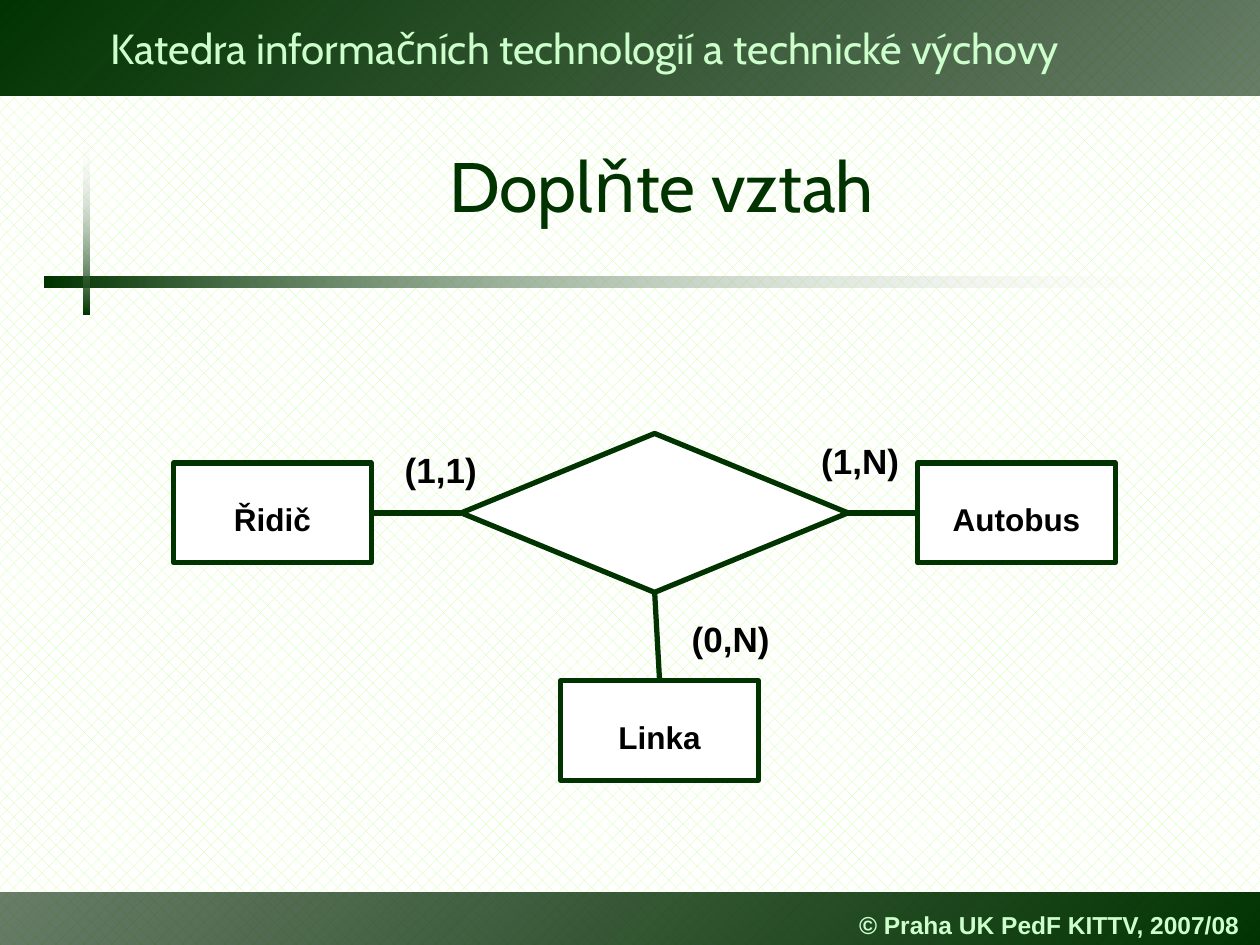
from dataclasses import dataclass

from lxml.etree import SubElement
from pptx import Presentation
from pptx.dml.color import RGBColor
from pptx.enum.dml import MSO_PATTERN
from pptx.enum.shapes import MSO_CONNECTOR, MSO_SHAPE
from pptx.enum.text import MSO_ANCHOR, PP_ALIGN
from pptx.oxml import parse_xml
from pptx.oxml.ns import nsdecls, qn
from pptx.util import Pt

DARK_GREEN = RGBColor(0x00, 0x33, 0x00)
DEEP_GREEN = RGBColor(0x00, 0x24, 0x00)
PALE_GREEN = RGBColor(0xCC, 0xFF, 0xCC)
LIME = RGBColor(0xCC, 0xFF, 0x99)
WHITE = RGBColor(0xFF, 0xFF, 0xFF)
BLACK = RGBColor(0x00, 0x00, 0x00)

HEADER_FONT = {"name": "Cabin", "size": Pt(24)}
TITLE_FONT = {"name": "Cabin", "size": Pt(40)}
FOOTER_FONT = {"name": "Arial", "size": Pt(14), "bold": True}
ENTITY_FONT = {"name": "Arial", "size": Pt(18), "bold": True}
LABEL_FONT = {"name": "Arial", "size": Pt(20), "bold": True}

ENTITY_WIDTH, ENTITY_HEIGHT = 113, 57
ROW_MIDDLE = 293.1
TOP, LEFT, BOTTOM, RIGHT = range(4)


@dataclass(frozen=True)
class Box:
    left: float
    top: float
    width: float
    height: float

    def lengths(self) -> tuple:
        return Pt(self.left), Pt(self.top), Pt(self.width), Pt(self.height)


@dataclass(frozen=True)
class GradientStop:
    color: RGBColor
    opacity: int = 100


@dataclass(frozen=True)
class Bar:
    box: Box
    start: GradientStop
    end: GradientStop
    angle: int
    rotation: int = 0


@dataclass(frozen=True)
class Entity:
    name: str
    left: float
    top: float
    own_side: int
    relation_side: int


@dataclass(frozen=True)
class Label:
    text: str
    box: Box


BAND = {"start": GradientStop(DEEP_GREEN, 59), "end": GradientStop(DARK_GREEN), "angle": 315}
RULE = {"start": GradientStop(DARK_GREEN), "end": GradientStop(WHITE, 0), "angle": 0}
BARS = [
    Bar(Box(0, 510, 720, 32), **BAND),
    Bar(Box(0, 0, 720, 54.7), rotation=180, **BAND),
    Bar(Box(25.2, 158.3, 683.3, 6), **RULE),
    Bar(Box(-1.9, 126.5, 103, 3.2), rotation=270, **RULE),
]
ROW_TOP = ROW_MIDDLE - ENTITY_HEIGHT / 2
ENTITIES = [
    Entity("Řidič", 99.2, ROW_TOP, RIGHT, LEFT),
    Entity("Autobus", 524.4, ROW_TOP, LEFT, RIGHT),
    Entity("Linka", 320.4, 388.9, TOP, BOTTOM),
]
LABELS = [
    Label("(1,1)", Box(223.9, 252.7, 56, 31.5)),
    Label("(1,N)", Box(462, 247.7, 59, 31.5)),
    Label("(0,N)", Box(388, 349.2, 59, 31.5)),
]


def write(shape, text: str, font: dict, color: RGBColor, alignment=PP_ALIGN.LEFT,
          anchor=MSO_ANCHOR.TOP, wrap: bool = True):
    frame = shape.text_frame
    frame.word_wrap = wrap
    frame.vertical_anchor = anchor
    paragraph = frame.paragraphs[0]
    paragraph.alignment = alignment
    run = paragraph.add_run()
    run.text = text
    for name, value in font.items():
        setattr(run.font, name, value)
    run.font.color.rgb = color
    return run


def add_text(slide, box: Box, text: str, font: dict, color: RGBColor, **layout):
    return write(slide.shapes.add_textbox(*box.lengths()), text, font, color, **layout)


def add_text_shadow(run) -> None:
    run.font.fill._xPr.find(qn("a:solidFill")).addnext(parse_xml(
        f'<a:effectLst {nsdecls("a")}><a:outerShdw dist="35921" dir="2700000">'
        '<a:srgbClr val="000000"/></a:outerShdw></a:effectLst>'))


def add_bar(slide, bar: Bar) -> None:
    shape = slide.shapes.add_shape(MSO_SHAPE.RECTANGLE, *bar.box.lengths())
    shape.rotation = bar.rotation
    shape.shadow.inherit = False
    shape.line.fill.background()
    shape.fill.gradient()
    shape.fill.gradient_angle = bar.angle
    for stop, wanted in zip(shape.fill.gradient_stops, (bar.start, bar.end)):
        stop.color.rgb = wanted.color
    colors = shape._element.spPr.iter(qn("a:srgbClr"))
    for element, wanted in zip(colors, (bar.start, bar.end)):
        if wanted.opacity < 100:
            SubElement(element, qn("a:alpha")).set("val", str(wanted.opacity * 1000))


def add_outlined(slide, kind, box: Box):
    shape = slide.shapes.add_shape(kind, *box.lengths())
    shape.shadow.inherit = False
    shape.fill.solid()
    shape.fill.fore_color.rgb = WHITE
    shape.line.color.rgb = DARK_GREEN
    shape.line.width = Pt(3)
    return shape


def add_entity(slide, entity: Entity):
    box = Box(entity.left, entity.top, ENTITY_WIDTH, ENTITY_HEIGHT)
    shape = add_outlined(slide, MSO_SHAPE.RECTANGLE, box)
    write(shape, entity.name, ENTITY_FONT, BLACK, PP_ALIGN.CENTER, MSO_ANCHOR.MIDDLE)
    shape.text_frame.margin_top = Pt(10.6)
    return shape


def join(slide, first, first_side: int, second, second_side: int) -> None:
    connector = slide.shapes.add_connector(MSO_CONNECTOR.STRAIGHT, 0, 0, 0, 0)
    connector.begin_connect(first, first_side)
    connector.end_connect(second, second_side)
    connector.line.color.rgb = DARK_GREEN
    connector.line.width = Pt(3)
    SubElement(connector._element.spPr, qn("a:effectLst"))


def main() -> None:
    presentation = Presentation()
    presentation.slide_width, presentation.slide_height = Pt(720), Pt(540)
    slide = presentation.slides.add_slide(presentation.slide_layouts[6])
    background = slide.background.fill
    background.patterned()
    background.pattern = MSO_PATTERN.PERCENT_25
    background.fore_color.rgb = LIME
    background.back_color.rgb = WHITE

    for bar in BARS:
        add_bar(slide, bar)
    header = add_text(slide, Box(56.2, 9.4, 581, 36),
                      "Katedra informačních technologií a technické výchovy",
                      HEADER_FONT, PALE_GREEN)
    add_text_shadow(header)
    add_text(slide, Box(483.8, 516.2, 236.2, 24), "© Praha UK PedF KITTV, 2007/08",
             FOOTER_FONT, PALE_GREEN, anchor=MSO_ANCHOR.MIDDLE, wrap=False)
    add_text(slide, Box(54, 60.5, 648, 90), "Doplňte vztah", TITLE_FONT, DARK_GREEN,
             alignment=PP_ALIGN.CENTER, anchor=MSO_ANCHOR.MIDDLE)

    relation = add_outlined(slide, MSO_SHAPE.DIAMOND, Box(263.6, ROW_MIDDLE - 45.4, 221, 90.8))
    for entity in ENTITIES:
        shape = add_entity(slide, entity)
        join(slide, relation, entity.relation_side, shape, entity.own_side)
    for label in LABELS:
        add_text(slide, label.box, label.text, LABEL_FONT, BLACK,
                 alignment=PP_ALIGN.CENTER, wrap=False)
    presentation.save("out.pptx")


if __name__ == "__main__":
    main()
